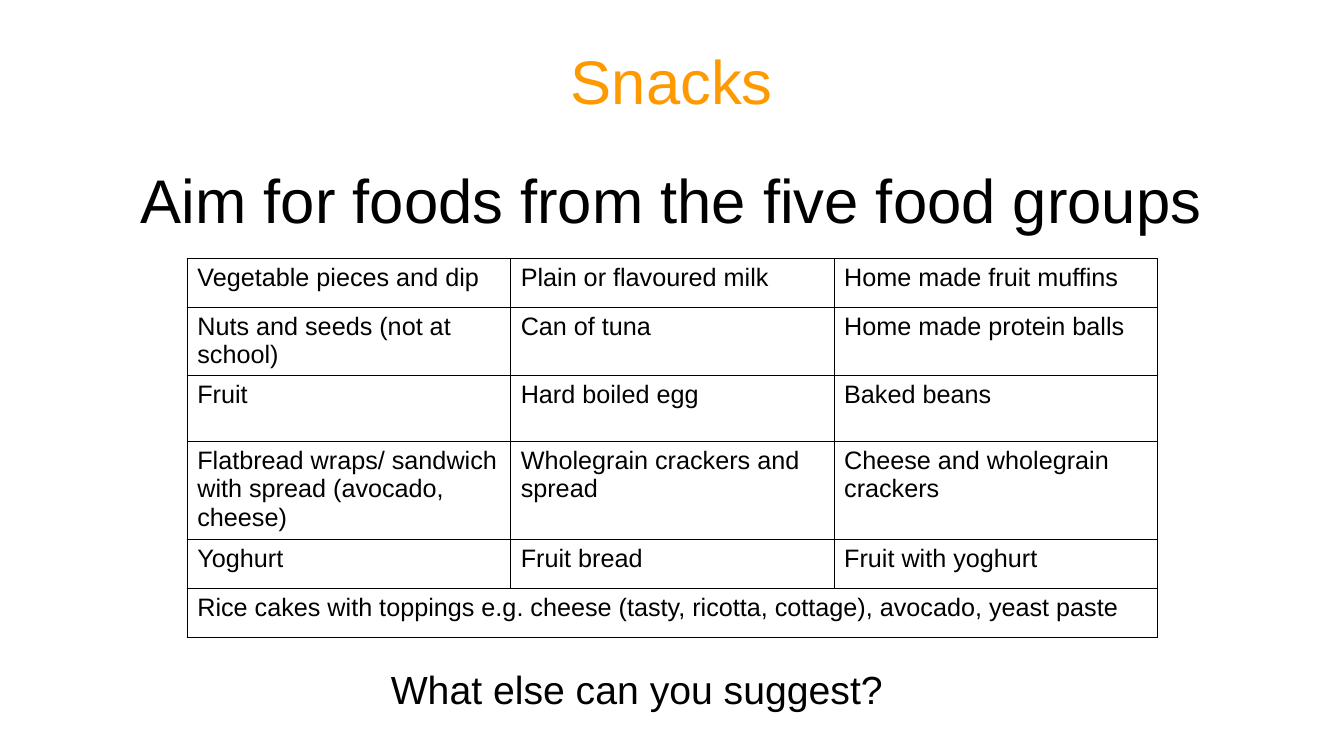
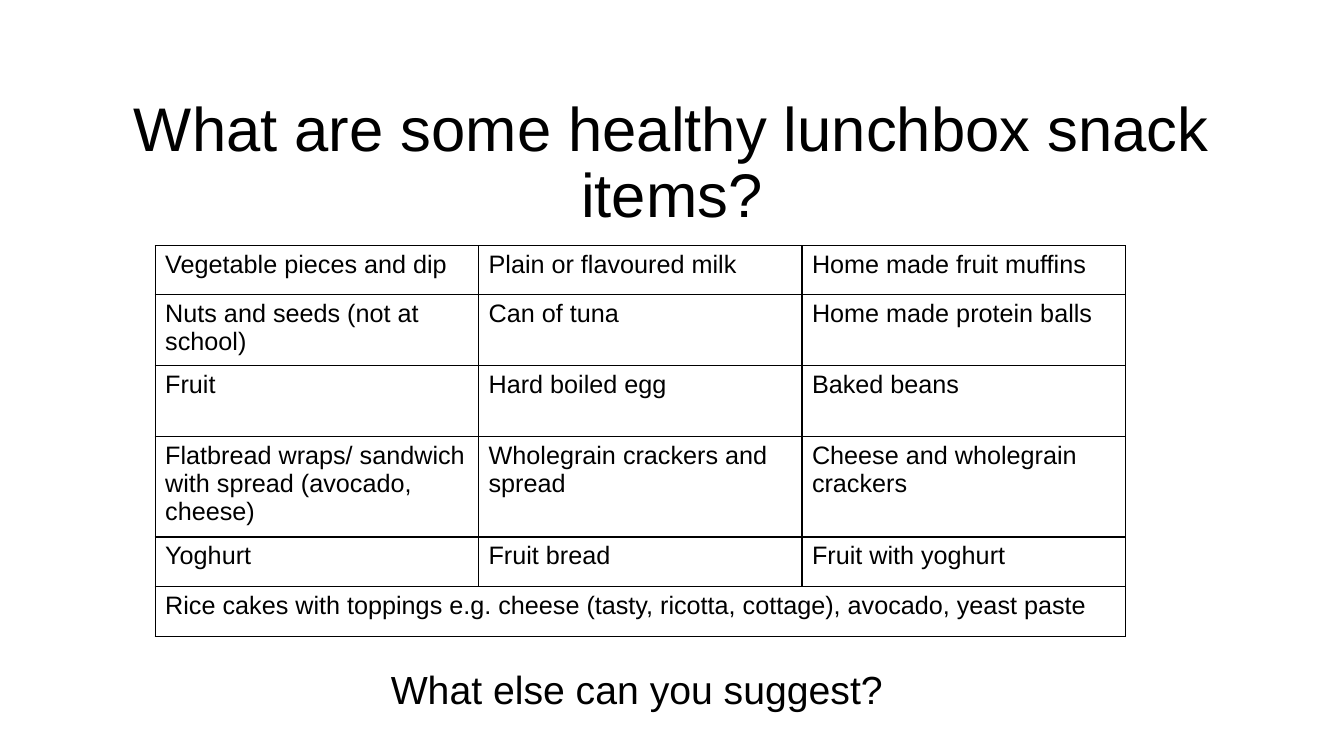
from dataclasses import dataclass

from lxml import etree
from pptx import Presentation
from pptx.dml.color import RGBColor
from pptx.enum.text import MSO_ANCHOR, PP_ALIGN
from pptx.oxml.ns import qn
from pptx.util import Cm, Pt


@dataclass(frozen=True)
class Theme:
    font: str = "Arial"
    text: str = "000000"
    accent: str = "FF9900"
    border: str = "000000"
    heading_size: int = 44
    question_size: int = 28
    table_size: int = 18
    border_width: int = 1


THEME = Theme()

SNACKS = [
    ["Vegetable pieces and dip", "Plain or flavoured milk", "Home made fruit muffins"],
    ["Nuts and seeds (not at school)", "Can of tuna", "Home made protein balls"],
    ["Fruit", "Hard boiled egg", "Baked beans"],
    ["Flatbread wraps/ sandwich with spread (avocado, cheese)",
     "Wholegrain crackers and spread", "Cheese and wholegrain crackers"],
    ["Yoghurt", "Fruit bread", "Fruit with yoghurt"],
    ["Rice cakes with toppings e.g. cheese (tasty, ricotta, cottage), avocado, yeast paste"],
]
COLUMN_COUNT = 3


def style_paragraph(paragraph, size, color=THEME.text):
    font = paragraph.font
    font.name, font.size = THEME.font, Pt(size)
    font.color.rgb = RGBColor.from_string(color)


def add_heading(slide, text, top, height, color=THEME.text,
                spacing=0.9, anchor=MSO_ANCHOR.TOP):
    """Centred heading across the content width."""
    box = slide.shapes.add_textbox(Cm(2.33), Cm(top), Cm(29.21), Cm(height))
    frame = box.text_frame
    frame.word_wrap = True
    frame.vertical_anchor = anchor
    paragraph = frame.paragraphs[0]
    paragraph.text = text
    paragraph.alignment = PP_ALIGN.CENTER
    paragraph.line_spacing = spacing
    style_paragraph(paragraph, THEME.heading_size, color)


def add_question(slide):
    """Closing question below the table."""
    box = slide.shapes.add_textbox(Cm(9.6), Cm(16.64), Cm(13.06), Cm(1.45))
    box.text_frame.word_wrap = False
    paragraph = box.text_frame.paragraphs[0]
    paragraph.text = "What else can you suggest?"
    style_paragraph(paragraph, THEME.question_size)


def set_borders(cell):
    properties = cell._tc.get_or_add_tcPr()
    for index, side in enumerate(("lnL", "lnR", "lnT", "lnB")):
        line = etree.Element(qn(f"a:{side}"), w=str(Pt(THEME.border_width)))
        fill = etree.SubElement(line, qn("a:solidFill"))
        etree.SubElement(fill, qn("a:srgbClr"), val=THEME.border)
        properties.insert(index, line)


def add_snack_table(slide, left, top, row_heights):
    """Bordered grid whose last row spans all columns."""
    table = slide.shapes.add_table(
        len(SNACKS), COLUMN_COUNT, Cm(left), Cm(top),
        Cm(24.45), Cm(sum(row_heights))).table
    table.first_row = table.horz_banding = False
    for row, height in zip(table.rows, row_heights):
        row.height = Cm(height)
    table.cell(len(SNACKS) - 1, 0).merge(table.cell(len(SNACKS) - 1, COLUMN_COUNT - 1))

    for cell in table.iter_cells():
        cell.fill.background()
        cell.margin_bottom = Cm(0.05)
        set_borders(cell)
    for row_index, row_texts in enumerate(SNACKS):
        for column_index, text in enumerate(row_texts):
            paragraph = table.cell(row_index, column_index).text_frame.paragraphs[0]
            paragraph.text = text
            style_paragraph(paragraph, THEME.table_size)


def add_blank_slide(presentation):
    return presentation.slides.add_slide(presentation.slide_layouts[6])


def build_food_groups_slide(presentation):
    slide = add_blank_slide(presentation)
    add_heading(slide, "Snacks", 0.28, 3.68, THEME.accent, anchor=MSO_ANCHOR.MIDDLE)
    add_heading(slide, "Aim for foods from the five food groups", 4.32, 1.88, spacing=0.8)
    add_snack_table(slide, 4.72, 6.52, [1.23, 1.68, 1.68, 2.39, 1.23, 1.23])
    add_question(slide)


def build_lunchbox_slide(presentation):
    slide = add_blank_slide(presentation)
    add_heading(slide, "What are some healthy lunchbox snack items?", 2.34, 4.27)
    add_question(slide)
    add_snack_table(slide, 3.91, 6.19, [1.24, 1.78, 1.78, 2.54, 1.25, 1.25])


def main():
    presentation = Presentation()
    presentation.slide_width, presentation.slide_height = Cm(33.87), Cm(19.05)
    build_food_groups_slide(presentation)
    build_lunchbox_slide(presentation)
    presentation.save("out.pptx")


if __name__ == "__main__":
    main()
